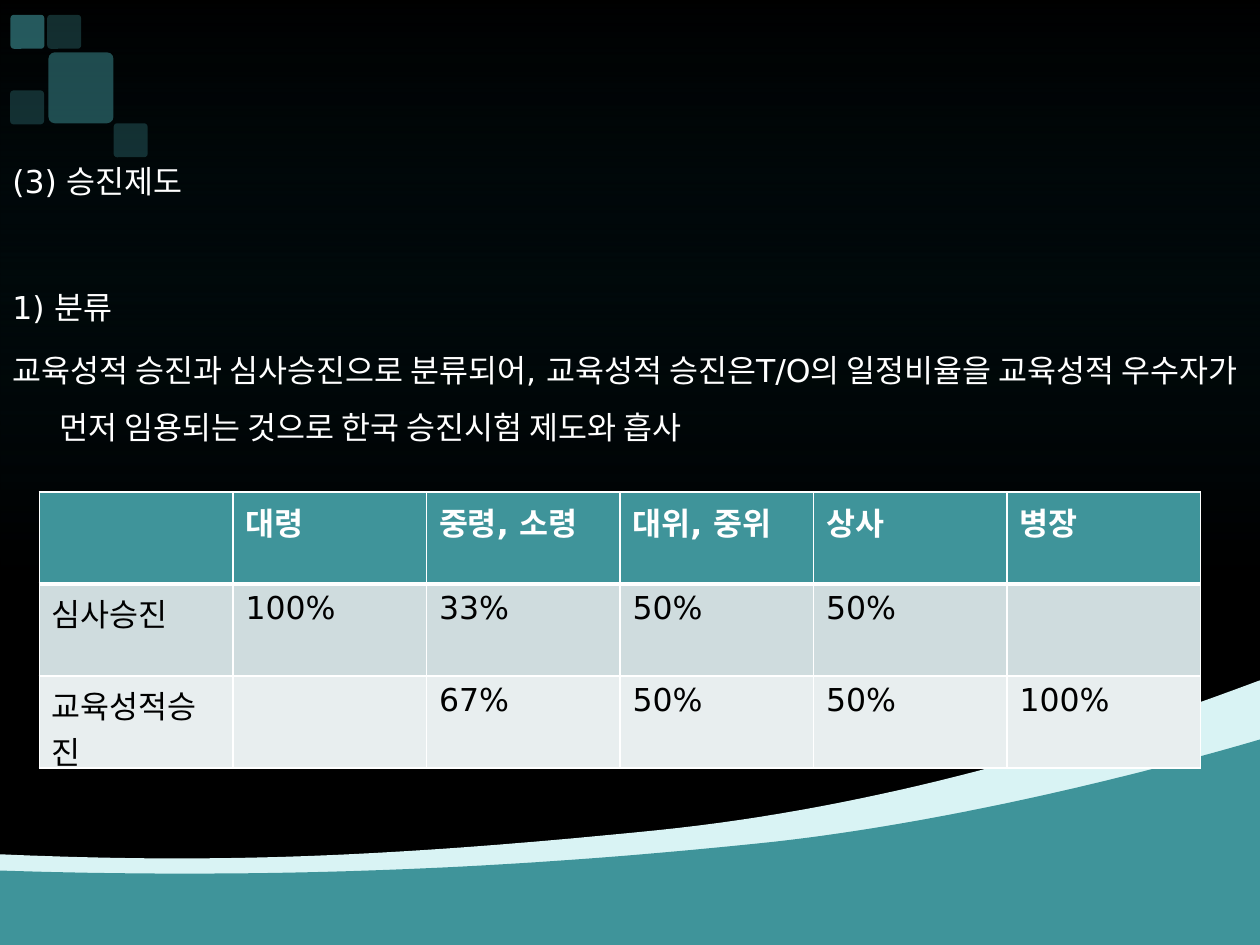
from lxml.etree import SubElement
from pptx import Presentation
from pptx.dml.color import RGBColor
from pptx.enum.shapes import MSO_SHAPE
from pptx.oxml.ns import qn
from pptx.util import Pt

FONT = "DejaVu Sans"
WIDE, HIGH = 720, 540
HEX = {
    "black": "000000",
    "white": "FFFFFF",
    "deep": "005466",
    "teal": "3F949A",
    "pale": "D9F3F4",
    "odd": "CFDCDE",
    "even": "E8EEEF",
}
# Each wave: fill, then points of a chain of cubic curves
WAVES = [
    ("pale", [(0, 488.2), (115.9, 493.2), (211, 491), (375.1, 474.5),
              (539.3, 457.9), (682.6, 402.5), (720, 388.8)]),
    ("teal", [(0, 497.5), (177.1, 503.3), (320.4, 493.9), (442.8, 481),
              (564.5, 467.3), (690.5, 431.3), (720, 422.6)]),
]
# Each tile: left, top, width, height, opacity in percent
TILES = [
    (27, 8.5, 19.4, 19.4, 30),
    (5.8, 51.7, 19.4, 19.4, 30),
    (6, 8.5, 19.4, 19.4, 60),
    (65, 70.5, 19.4, 19.4, 30),
    (27.7, 29.9, 37.2, 40.6, 50),
]
# Each paragraph: space before, text
LINES = [
    (3.6, "(3) 승진제도"),
    (39.6, "1) 분류"),
    (3.6, "교육성적 승진과 심사승진으로 분류되어, 교육성적 승진은T/O의 일정비율을 "
          "교육성적 우수자가 먼저 임용되는 것으로 한국 승진시험 제도와 흡사"),
]
ROWS = [
    ["", "대령", "중령, 소령", "대위, 중위", "상사", "병장"],
    ["심사승진", "100%", "33%", "50%", "50%", ""],
    ["교육성적승진", "", "67%", "50%", "50%", "100%"],
]


def rgb(name):
    return RGBColor.from_string(HEX[name])


def paint(shape, name):
    """Give a shape a flat fill with no line and no shadow."""
    shape.shadow.inherit = False
    shape.line.fill.background()
    shape.fill.solid()
    shape.fill.fore_color.rgb = rgb(name)


def fade(shape, *parts):
    """Set the opacity, in percent, of each fill colour in turn."""
    for tint, part in zip(shape._element.spPr.iter(qn("a:srgbClr")), parts):
        SubElement(tint, qn("a:alpha"), val=str(part * 1000))


def add_run(para, text, tint, bold=False):
    run = para.add_run()
    run.text = text
    run.font.name = FONT
    run.font.size = Pt(18)
    run.font.bold = bold
    run.font.color.rgb = rgb(tint)


def add_shade(slide):
    shape = slide.shapes.add_shape(MSO_SHAPE.RECTANGLE, 0, 0, Pt(WIDE), Pt(HIGH))
    paint(shape, "black")
    shape.fill.gradient()
    shape.fill.gradient_angle = 270
    stops = shape.fill.gradient_stops
    for stop, name, place in zip(stops, ("deep", "black"), (0, 0.61)):
        stop.color.rgb = rgb(name)
        stop.position = place
    fade(shape, 0, 40)


def trace(knots, steps=40):
    """Return points along a chain of cubic curves."""
    dots = [knots[0]]
    for i in range(0, len(knots) - 1, 3):
        for k in range(1, steps + 1):
            t = k / steps
            mix = ((1 - t) ** 3, 3 * t * (1 - t) ** 2, 3 * t * t * (1 - t), t ** 3)
            dots.append(tuple(sum(m * p[a] for m, p in zip(mix, knots[i:i + 4]))
                              for a in (0, 1)))
    return dots


def add_wave(slide, name, knots):
    dots = trace(knots) + [(WIDE, HIGH), (0, HIGH)]
    first, *rest = [(Pt(x), Pt(y)) for x, y in dots]
    form = slide.shapes.build_freeform(*first)
    form.add_line_segments(rest, close=True)
    paint(form.convert_to_shape(), name)


def add_tile(slide, left, top, wide, high, part):
    shape = slide.shapes.add_shape(
        MSO_SHAPE.ROUNDED_RECTANGLE, Pt(left), Pt(top), Pt(wide), Pt(high))
    shape.adjustments[0] = 0.1
    paint(shape, "teal")
    fade(shape, part)


def add_body(slide):
    box = slide.shapes.add_textbox(0, Pt(78.5), Pt(WIDE), Pt(461.5))
    frame = box.text_frame
    frame.word_wrap = True
    for i, (gap, text) in enumerate(LINES):
        para = frame.add_paragraph() if i else frame.paragraphs[0]
        para.line_spacing = 1.5
        para.space_before = Pt(gap)
        props = para._p.get_or_add_pPr()
        props.set("marL", str(Pt(27)))
        props.set("indent", str(Pt(-27)))
        add_run(para, text, "white")


def edge(cell, base):
    """Draw white cell borders; base is the width of the lower one."""
    props = cell._tc.get_or_add_tcPr()
    for i, (side, width) in enumerate(zip("LRTB", (1, 1, 1, base))):
        line = props.makeelement(qn("a:ln" + side), {"w": str(Pt(width))})
        fill = SubElement(line, qn("a:solidFill"))
        SubElement(fill, qn("a:srgbClr"), val=HEX["white"])
        props.insert(i, line)


def add_grid(slide):
    grid = slide.shapes.add_table(
        len(ROWS), len(ROWS[0]), Pt(22.5), Pt(281.25), Pt(663.6), Pt(157.5)).table
    for r, row in enumerate(ROWS):
        for c, text in enumerate(row):
            cell = grid.cell(r, c)
            cell.fill.solid()
            cell.fill.fore_color.rgb = rgb(("teal", "odd", "even")[r])
            edge(cell, 1 if r else 3)
            if text:
                add_run(cell.text_frame.paragraphs[0], text,
                        "black" if r else "white", bold=r == 0)


def main():
    deck = Presentation()
    deck.slide_width, deck.slide_height = Pt(WIDE), Pt(HIGH)
    slide = deck.slides.add_slide(deck.slide_layouts[6])
    slide.background.fill.solid()
    slide.background.fill.fore_color.rgb = rgb("black")
    add_shade(slide)
    for wave in WAVES:
        add_wave(slide, *wave)
    for tile in TILES:
        add_tile(slide, *tile)
    add_body(slide)
    add_grid(slide)
    deck.save("out.pptx")


if __name__ == "__main__":
    main()
